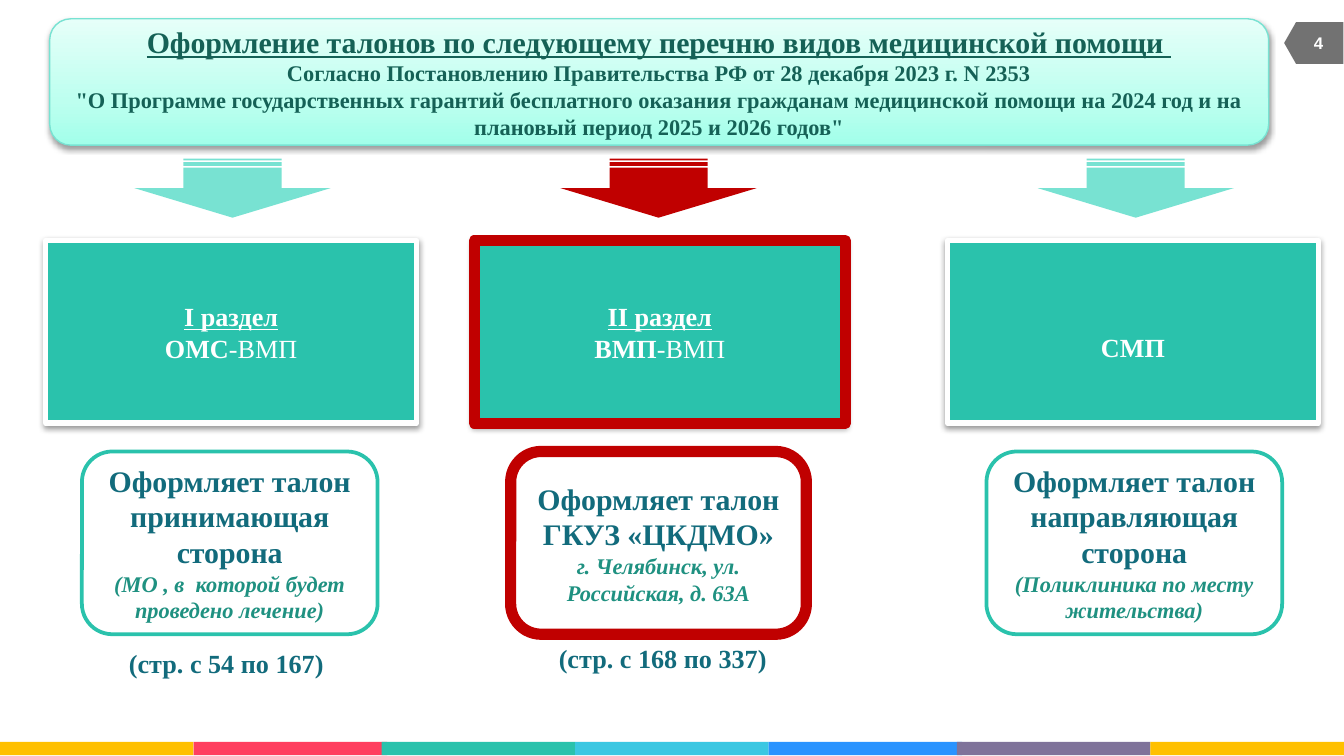
from copy import deepcopy

from lxml import etree
from pptx import Presentation
from pptx.dml.color import RGBColor
from pptx.enum.shapes import MSO_SHAPE as Shape
from pptx.enum.text import MSO_ANCHOR as Anchor, PP_ALIGN as Align
from pptx.oxml.ns import qn
from pptx.util import Inches, Pt

COLORS = {
    "teal": "2AC2AC", "mint": "78E2D2", "red": "C00000", "white": "FFFFFF",
    "gray": "727272", "yellow": "FFC000", "pink": "FF3F5F", "cyan": "3BC7E2",
    "blue": "2993FF", "purple": "7F739A", "title": "156156",
    "heading": "126B7C", "note": "1F9181", "shadow": "000000",
    "banner_bottom": "A2FFEA", "banner_middle": "BDFFEF", "banner_top": "E6FFF9",
}
SERIF = "Times New Roman"
STRIPES = [(0, "yellow"), (1.44, "pink"), (2.84, "teal"), (4.28, "cyan"),
           (5.72, "blue"), (7.12, "purple"), (8.56, "yellow")]
SECTION = (1.79, 2.76, 1.36)  # top, width, height
ISSUER = (3.36, 2.2, 1.36)


def rgb(name):
    return RGBColor.from_string(COLORS[name])


def run(text, size, color, bold=True, italic=False, underline=False, font=SERIF):
    return dict(text=text, size=size, color=color, bold=bold,
                italic=italic, underline=underline, font=font)


def add_text(shape, paragraphs, align=Align.CENTER, anchor=Anchor.MIDDLE):
    """Fill a shape with paragraphs, each a list of runs."""
    frame = shape.text_frame
    frame.word_wrap = True
    frame.vertical_anchor = anchor
    for index, runs in enumerate(paragraphs):
        paragraph = frame.add_paragraph() if index else frame.paragraphs[0]
        paragraph.alignment = align
        for style in runs:
            piece = paragraph.add_run()
            piece.text = style["text"]
            font = piece.font
            font.name, font.size = style["font"], Pt(style["size"])
            font.bold, font.italic = style["bold"], style["italic"]
            font.underline = style["underline"]
            font.color.rgb = rgb(style["color"])


def add_box(slide, kind, left, top, width, height, fill=None, line=None,
            line_width=0, rotation=0):
    shape = slide.shapes.add_shape(
        kind, Inches(left), Inches(top), Inches(width), Inches(height))
    shape.rotation = rotation
    if fill:
        shape.fill.solid()
        shape.fill.fore_color.rgb = rgb(fill)
    else:
        shape.fill.background()
    if line:
        shape.line.color.rgb = rgb(line)
        shape.line.width = Pt(line_width)
    else:
        shape.line.fill.background()
    shape.shadow.inherit = False
    return shape


def add_label(slide, left, top, width, height, label, **layout):
    box = slide.shapes.add_textbox(
        Inches(left), Inches(top), Inches(width), Inches(height))
    add_text(box, [[label]], **layout)


def add_shadow(shape):
    effects = shape._element.spPr.find(qn("a:effectLst"))
    shadow = etree.SubElement(
        effects, qn("a:outerShdw"), blurRad=str(Pt(3.1)), dist=str(Pt(1.6)),
        dir="5400000", rotWithShape="0")
    color = etree.SubElement(shadow, qn("a:srgbClr"), val=COLORS["shadow"])
    etree.SubElement(color, qn("a:alpha"), val="38000")


def fill_banner(shape):
    """Apply the three-stop gradient that runs from bottom to top."""
    shape.fill.gradient()
    shape.fill.gradient_angle = 90
    first = next(shape._element.spPr.iter(qn("a:gs")))
    first.addnext(deepcopy(first))
    names = ("banner_bottom", "banner_middle", "banner_top")
    for stop, name, position in zip(shape.fill.gradient_stops, names, (0, 0.35, 1)):
        stop.color.rgb = rgb(name)
        stop.position = position


def add_banner(slide):
    banner = add_box(slide, Shape.ROUNDED_RECTANGLE, 0.37, 0.14, 9.07, 0.94,
                     line="mint", line_width=0.75)
    fill_banner(banner)
    add_shadow(banner)
    add_text(banner, [
        [run("Оформление талонов по следующему перечню видов медицинской помощи ",
             16, "title", underline=True)],
        [run("Согласно Постановлению Правительства РФ от 28 декабря 2023 г. N 2353",
             12, "title")],
        [run('"О Программе государственных гарантий бесплатного оказания гражданам '
             'медицинской помощи на 2024 год и на плановый период 2025 и 2026 годов"',
             12, "title")],
    ])


def add_arrow(slide, left, color):
    add_box(slide, Shape.STRIPED_RIGHT_ARROW, left, 0.67, 0.44, 1.46,
            fill=color, rotation=90)


def add_section(slide, left, paragraphs):
    box = add_box(slide, Shape.RECTANGLE, left, *SECTION,
                  fill="teal", line="white", line_width=3)
    add_shadow(box)
    add_text(box, paragraphs)
    return box


def add_issuer(slide, left, heading, note):
    box = add_box(slide, Shape.ROUNDED_RECTANGLE, left, *ISSUER,
                  fill="white", line="teal", line_width=2)
    add_text(box, [[run(heading, 16, "heading")],
                   [run(note, 12, "note", italic=True)]])


def section_text(number, program):
    return [[run(number, 14, "white", underline=True)],
            [run(program, 14, "white"), run("-ВМП", 14, "white", bold=False)]]


def main():
    presentation = Presentation()
    presentation.slide_width = Inches(10)
    presentation.slide_height = Inches(10 * 9 / 16)
    slide = presentation.slides.add_slide(presentation.slide_layouts[6])

    for left, color in STRIPES:
        add_box(slide, Shape.RECTANGLE, left, 5.52, 1.44, 0.1, fill=color)
    add_box(slide, Shape.FLOWCHART_OFFPAGE_CONNECTOR, 9.62, 0.1, 0.31, 0.44,
            fill="gray", rotation=90)
    add_banner(slide)
    add_label(slide, 9.6, 0.17, 0.42, 0.3, run("4", 9, "white", font="Arial"))

    for left, color in ((8.23, "mint"), (4.68, "red"), (1.51, "mint")):
        add_arrow(slide, left, color)

    add_section(slide, 0.34, section_text("I раздел", "ОМС"))
    add_section(slide, 3.53, section_text("II раздел", "ВМП"))
    specialized = add_section(slide, 7.05, [[run("СМП", 14, "white")]])
    specialized.text_frame.margin_top = Inches(0.28)  # level with the second lines

    add_issuer(slide, 0.61, "Оформляет талон принимающая сторона",
               "(МО , в  которой будет проведено лечение)")
    add_issuer(slide, 3.8, "Оформляет талон ГКУЗ «ЦКДМО»",
               "г. Челябинск, ул. Российская, д. 63А")
    add_issuer(slide, 7.34, "Оформляет талон направляющая сторона",
               "(Поликлиника по месту жительства)")

    add_label(slide, 0.7, 4.77, 1.97, 0.34,
              run("(стр. с 54 по 167)", 14, "heading"), anchor=Anchor.TOP)
    add_label(slide, 4.06, 4.73, 1.83, 0.34,
              run("(стр. с 168 по 337)", 14, "heading"),
              align=Align.LEFT, anchor=Anchor.TOP)

    for kind, left, size in ((Shape.RECTANGLE, 3.53, SECTION),
                             (Shape.ROUNDED_RECTANGLE, 3.8, ISSUER)):
        add_box(slide, kind, left, *size, line="red", line_width=6)

    presentation.save("out.pptx")


if __name__ == "__main__":
    main()
